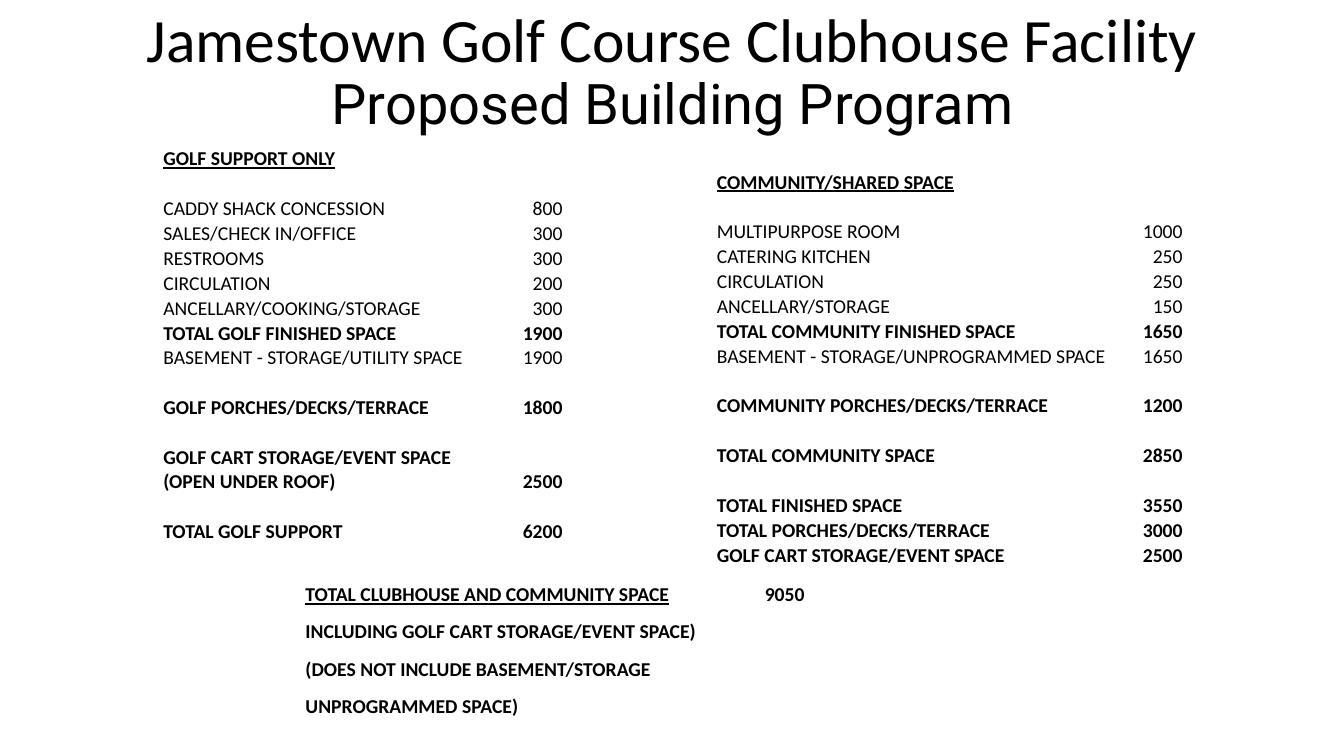
from pptx import Presentation
from pptx.dml.color import RGBColor
from pptx.enum.text import MSO_ANCHOR, MSO_AUTO_SIZE, PP_ALIGN
from pptx.util import Inches, Pt

BLACK = RGBColor(0, 0, 0)
BODY_SIZE = 14
PLAIN, BOLD, HEADING = "plain", "bold", "heading"
BLANK = ("", "", PLAIN)

GOLF_SUPPORT = [
    ("GOLF SUPPORT ONLY", "", HEADING),
    BLANK,
    ("CADDY SHACK CONCESSION", "800", PLAIN),
    ("SALES/CHECK IN/OFFICE", "300", PLAIN),
    ("RESTROOMS", "300", PLAIN),
    ("CIRCULATION", "200", PLAIN),
    ("ANCELLARY/COOKING/STORAGE", "300", PLAIN),
    ("TOTAL GOLF FINISHED SPACE", "1900", BOLD),
    ("BASEMENT - STORAGE/UTILITY SPACE", "1900", PLAIN),
    BLANK,
    ("GOLF PORCHES/DECKS/TERRACE", "1800", BOLD),
    BLANK,
    ("GOLF CART STORAGE/EVENT SPACE (OPEN UNDER ROOF)", "2500", BOLD),
    BLANK,
    ("TOTAL GOLF SUPPORT", "6200", BOLD),
    BLANK,
    BLANK,
]
COMMUNITY_SPACE = [
    ("COMMUNITY/SHARED SPACE", "", HEADING),
    BLANK,
    ("MULTIPURPOSE ROOM", "1000", PLAIN),
    ("CATERING KITCHEN", "250", PLAIN),
    ("CIRCULATION", "250", PLAIN),
    ("ANCELLARY/STORAGE", "150", PLAIN),
    ("TOTAL COMMUNITY FINISHED SPACE", "1650", BOLD),
    ("BASEMENT - STORAGE/UNPROGRAMMED SPACE", "1650", PLAIN),
    BLANK,
    ("COMMUNITY PORCHES/DECKS/TERRACE", "1200", BOLD),
    BLANK,
    ("TOTAL COMMUNITY SPACE", "2850", BOLD),
    BLANK,
    ("TOTAL FINISHED SPACE", "3550", BOLD),
    ("TOTAL PORCHES/DECKS/TERRACE", "3000", BOLD),
    ("GOLF CART STORAGE/EVENT SPACE", "2500", BOLD),
]
GRAND_TOTAL = [
    ("TOTAL CLUBHOUSE AND COMMUNITY SPACE", "9050", HEADING),
    ("INCLUDING GOLF CART STORAGE/EVENT SPACE)", "", BOLD),
    ("(DOES NOT INCLUDE BASEMENT/STORAGE", "", BOLD),
    ("UNPROGRAMMED SPACE)", "", BOLD),
]


def place_title(slide, left, top, width, height):
    title = slide.shapes.title
    title.left, title.top = Inches(left), Inches(top)
    title.width, title.height = Inches(width), Inches(height)
    frame = title.text_frame
    frame.word_wrap = True
    frame.auto_size = MSO_AUTO_SIZE.NONE
    frame.vertical_anchor = MSO_ANCHOR.MIDDLE
    heading = frame.paragraphs[0]
    heading.alignment = PP_ALIGN.CENTER
    heading.line_spacing = 0.9
    facility = heading.add_run()
    facility.text = "Jamestown Golf Course Clubhouse Facility"
    heading.add_line_break()
    program = heading.add_run()
    program.text = "Proposed Building Program"
    for line, face, size in ((facility, "Calibri", 44), (program, "Roboto", 40)):
        line.font.name = face
        line.font.size = Pt(size)
        line.font.color.rgb = BLACK


def fill_cell(cell, text, bold, underline, alignment):
    cell.fill.background()
    cell.vertical_anchor = MSO_ANCHOR.BOTTOM
    cell.margin_left = cell.margin_right = cell.margin_top = Inches(0.01)
    cell.margin_bottom = 0
    cell.text = text
    entry = cell.text_frame.paragraphs[0]
    entry.alignment = alignment
    entry.font.name = "Calibri"
    entry.font.size = Pt(BODY_SIZE)
    entry.font.bold = bold
    entry.font.underline = underline
    entry.font.color.rgb = BLACK
    if not text:
        entry._p.get_or_add_endParaRPr().set("sz", str(BODY_SIZE * 100))


def place_areas(slide, areas, left, top, label_width, value_width, row_height):
    table = slide.shapes.add_table(
        len(areas), 2, Inches(left), Inches(top),
        Inches(label_width + value_width), Inches(row_height * len(areas)),
    ).table
    table.first_row = table.horz_banding = False
    table.columns[0].width = Inches(label_width)
    table.columns[1].width = Inches(value_width)
    for row, (label, value, style) in zip(table.rows, areas):
        row.height = Inches(row_height)
        label_cell, value_cell = row.cells
        bold = style != PLAIN
        fill_cell(label_cell, label, bold, style == HEADING, PP_ALIGN.LEFT)
        fill_cell(value_cell, value, bold, False, PP_ALIGN.RIGHT)


def main():
    deck = Presentation()
    deck.slide_width, deck.slide_height = Inches(13.33), Inches(7.5)
    slide = deck.slides.add_slide(deck.slide_layouts[5])
    place_title(slide, 0.92, 0, 11.5, 1.45)
    place_areas(slide, GOLF_SUPPORT, 1.61, 1.45, 3.4, 0.58, 0.22)
    place_areas(slide, COMMUNITY_SPACE, 7.1, 1.68, 3.97, 0.67, 0.2)
    place_areas(slide, GRAND_TOTAL, 3.02, 5.65, 4.25, 0.72, 0.37)
    deck.save("out.pptx")


if __name__ == "__main__":
    main()
